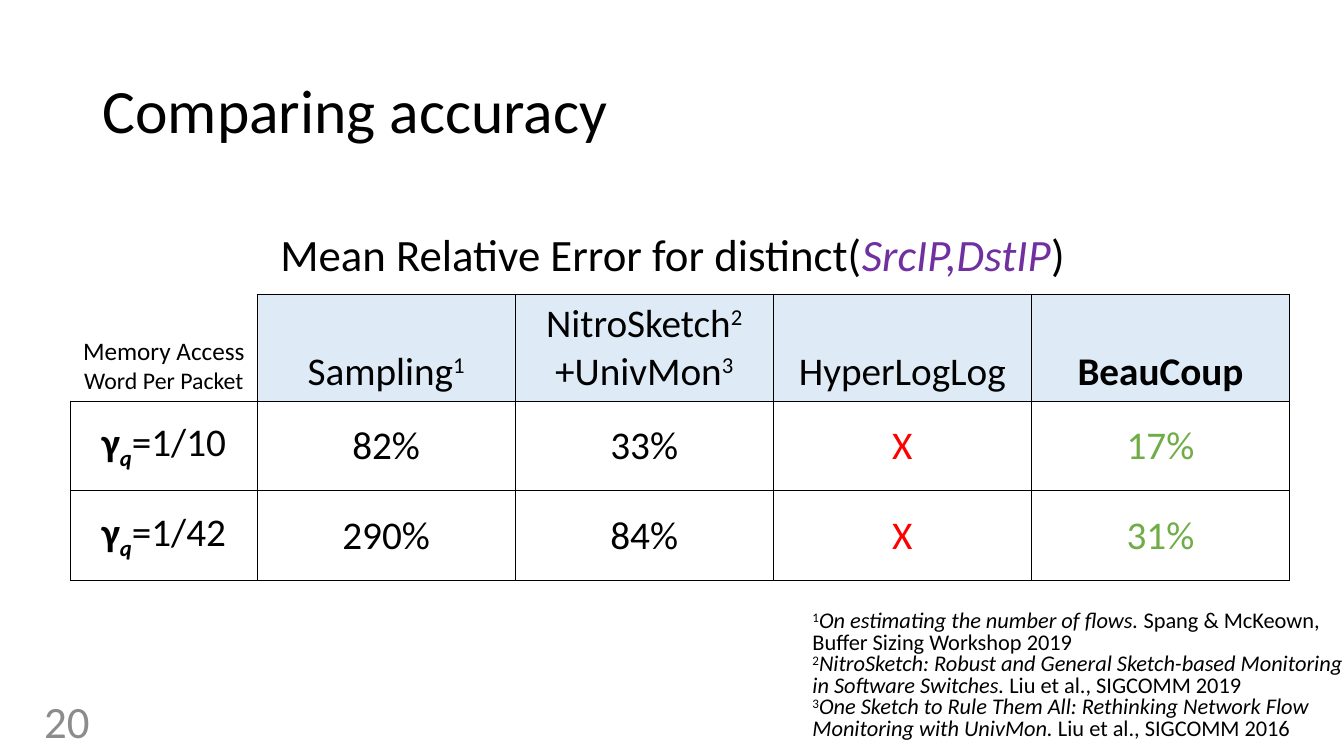
from lxml import etree
from pptx import Presentation
from pptx.dml.color import RGBColor
from pptx.enum.text import MSO_ANCHOR, PP_ALIGN
from pptx.oxml.ns import qn
from pptx.util import Inches, Pt

LEFT, CENTER = PP_ALIGN.LEFT, PP_ALIGN.CENTER
TOP, MIDDLE, BOTTOM = MSO_ANCHOR.TOP, MSO_ANCHOR.MIDDLE, MSO_ANCHOR.BOTTOM
BLACK = RGBColor(0x00, 0x00, 0x00)
GRAY = RGBColor(0x8C, 0x8C, 0x8C)
RED = RGBColor(0xFF, 0x00, 0x00)
GREEN = RGBColor(0x70, 0xAD, 0x47)
PURPLE = RGBColor(0x70, 0x30, 0xA0)
PALE_BLUE = RGBColor(0xDE, 0xEB, 0xF7)
FONT = "Calibri"

PLAIN = {}
BOLD = {"bold": True}
ITALIC = {"italic": True}
SUPER = {"baseline": 30}
SUB = {"bold": True, "italic": True, "baseline": -25}
MISS = {"color": RED}
BEST = {"color": GREEN}

TITLE = [[("Comparing accuracy", PLAIN)]]
PAGE_NUMBER = [[("20", {"color": GRAY})]]
CAPTION = [[
    ("Mean Relative Error for distinct(", PLAIN),
    ("SrcIP,DstIP", {"color": PURPLE, "italic": True}),
    (")", PLAIN),
]]
REFERENCES = [
    ("1", "On estimating the number of flows. ",
     "Spang & McKeown, Buffer Sizing Workshop 2019"),
    ("2", "NitroSketch: Robust and General Sketch-based Monitoring in Software Switches. ",
     "Liu et al., SIGCOMM 2019"),
    ("3", "One Sketch to Rule Them All: Rethinking Network Flow Monitoring with UnivMon. ",
     "Liu et al., SIGCOMM 2016"),
]
HEADER = [
    [("Memory Access ", {"size": 18}), ("Word Per Packet", {"size": 17})],
    [("Sampling", PLAIN), ("1", SUPER)],
    [("NitroSketch", PLAIN), ("2", SUPER), ("\n", PLAIN), ("+UnivMon", PLAIN), ("3", SUPER)],
    [("HyperLogLog", PLAIN)],
    [("BeauCoup", BOLD)],
]
RESULTS = [
    ("=1/10", "82%", "33%", "X", "17%"),
    ("=1/42", "290%", "84%", "X", "31%"),
]
RESULT_STYLES = [PLAIN, PLAIN, MISS, BEST]
COLUMN_WIDTHS = [1.85] + [2.56] * 4
ROW_HEIGHTS = [1.06, 0.89, 0.89]


def write(frame, paragraphs, size, align=LEFT, anchor=TOP, spacing=None):
    frame.word_wrap = True
    frame.vertical_anchor = anchor
    for index, spans in enumerate(paragraphs):
        para = frame.add_paragraph() if index else frame.paragraphs[0]
        para.alignment = align
        para.line_spacing = spacing
        for text, style in spans:
            if text == "\n":
                para.add_line_break()
                continue
            span = para.add_run()
            span.text = text
            span.font.name = FONT
            span.font.size = Pt(style.get("size", size))
            span.font.bold = style.get("bold", False)
            span.font.italic = style.get("italic", False)
            span.font.color.rgb = style.get("color", BLACK)
            if "baseline" in style:
                span.font._element.set("baseline", str(style["baseline"] * 1000))


def add_text(page, place, paragraphs, size, **layout):
    box = page.shapes.add_textbox(*map(Inches, place))
    write(box.text_frame, paragraphs, size, **layout)


def set_borders(cell, hidden):
    properties = cell._tc.get_or_add_tcPr()
    for index, side in enumerate(("lnL", "lnR", "lnT", "lnB")):
        line = etree.Element(qn(f"a:{side}"), w=str(Pt(1)))
        if side in hidden:
            etree.SubElement(line, qn("a:noFill"))
        else:
            fill = etree.SubElement(line, qn("a:solidFill"))
            etree.SubElement(fill, qn("a:srgbClr"), val=str(BLACK))
        properties.insert(index, line)


def add_results_table(page):
    rows = [HEADER]
    for rate, *values in RESULTS:
        label = [("γ", BOLD), ("q", SUB), (rate, PLAIN)]
        rows.append([label] + [[pair] for pair in zip(values, RESULT_STYLES)])
    frame = page.shapes.add_table(
        len(rows), len(COLUMN_WIDTHS), Inches(0.7), Inches(2.92),
        Inches(sum(COLUMN_WIDTHS)), Inches(sum(ROW_HEIGHTS)))
    table = frame.table
    table.first_row = False
    table.horz_banding = False
    for column, width in zip(table.columns, COLUMN_WIDTHS):
        column.width = Inches(width)
    for row, height in zip(table.rows, ROW_HEIGHTS):
        row.height = Inches(height)
    for r, row in enumerate(rows):
        for c, spans in enumerate(row):
            cell = table.cell(r, c)
            write(cell.text_frame, [spans], 28, align=CENTER)
            cell.vertical_anchor = MIDDLE if r else BOTTOM
            if r == 0 and c > 0:
                cell.fill.solid()
                cell.fill.fore_color.rgb = PALE_BLUE
            else:
                cell.fill.background()
            set_borders(cell, ("lnL", "lnT") if r == c == 0 else ())


def main():
    deck = Presentation()
    deck.slide_width, deck.slide_height = Inches(13.33), Inches(7.5)
    page = deck.slides.add_slide(deck.slide_layouts[6])
    notes = [[(mark, SUPER), (work, ITALIC), (source, PLAIN)]
             for mark, work, source in REFERENCES]
    add_text(page, (0.92, 0.4, 11.5, 1.45), TITLE, 44, anchor=MIDDLE, spacing=0.9)
    add_results_table(page)
    add_text(page, (0.34, 6.95, 3, 0.4), PAGE_NUMBER, 32, anchor=MIDDLE)
    add_text(page, (0.7, 2.2, 11.94, 0.64), CAPTION, 32, align=CENTER)
    add_text(page, (7.96, 6.02, 5.55, 1.4), notes, 16, spacing=0.8)
    deck.save("out.pptx")


if __name__ == "__main__":
    main()
